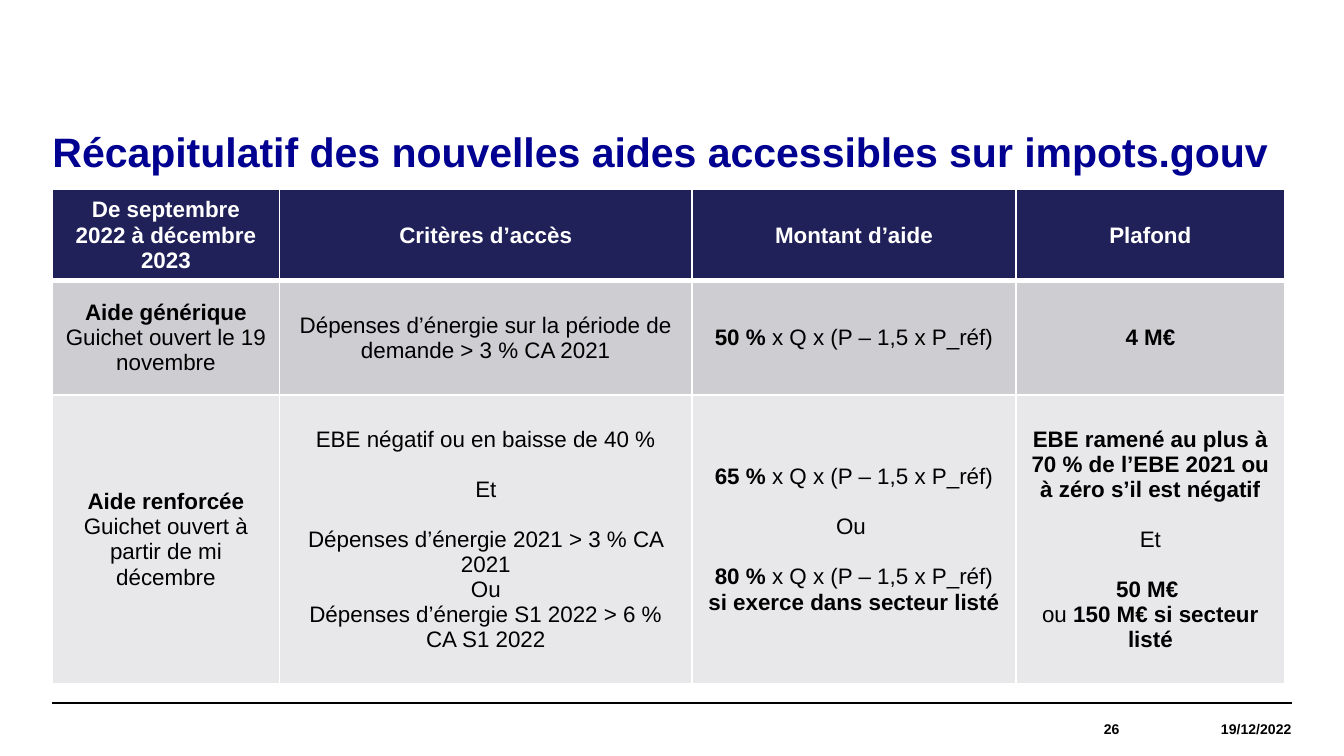
from dataclasses import dataclass

from lxml import etree
from pptx import Presentation
from pptx.dml.color import RGBColor
from pptx.enum.shapes import MSO_CONNECTOR
from pptx.enum.text import MSO_ANCHOR, PP_ALIGN
from pptx.oxml.ns import qn
from pptx.util import Inches, Pt

LEFT, CENTER, RIGHT = PP_ALIGN.LEFT, PP_ALIGN.CENTER, PP_ALIGN.RIGHT
TOP, MIDDLE = MSO_ANCHOR.TOP, MSO_ANCHOR.MIDDLE
STRAIGHT = MSO_CONNECTOR.STRAIGHT


@dataclass(frozen=True)
class Theme:
    font: str = "Arial"
    title: str = "000091"
    header: str = "21215A"
    generic: str = "CDCDD2"
    reinforced: str = "E8E8EA"
    text: str = "000000"
    white: str = "FFFFFF"
    title_size: float = 22
    table_size: float = 12
    footer_size: float = 7.5
    gap: float = 13.4


THEME = Theme()
COLUMNS = [1.69, 3.07, 2.41, 2]
ROWS = [0.65, 0.85, 2.15]
FILLS = [THEME.header, THEME.generic, THEME.reinforced]


def bold(text):
    return text, True


def plain(text):
    return text, False


def para(*runs, gap=False):
    return runs, gap


FORMULA = plain(" x Q x (P – 1,5 x P_réf)")
HEADINGS = ["De septembre 2022 à décembre 2023", "Critères d’accès",
            "Montant d’aide", "Plafond"]

# Each cell is a list of paragraphs
CELLS = [
    [[para(bold(heading))] for heading in HEADINGS],
    [
        [para(bold("Aide générique")),
         para(plain("Guichet ouvert le 19 novembre"))],
        [para(plain("Dépenses d’énergie sur la période de demande > 3 % CA 2021"))],
        [para(bold("50 %"), FORMULA)],
        [para(bold("4 M€"))],
    ],
    [
        [para(bold("Aide renforcée")),
         para(plain("Guichet ouvert à partir de mi décembre"))],
        [para(plain("EBE négatif ou en baisse de 40 %")),
         para(plain("Et"), gap=True),
         para(plain("Dépenses d’énergie 2021 > 3 % CA 2021"), gap=True),
         para(plain("Ou")),
         para(plain("Dépenses d’énergie S1 2022 > 6 % CA S1 2022"))],
        [para(bold("65 %"), FORMULA),
         para(plain("Ou "), gap=True),
         para(bold("80 %"), FORMULA, gap=True),
         para(bold("si exerce dans secteur listé"))],
        [para(bold("EBE ramené au plus à 70 % de l’EBE 2021 ou à zéro s’il est négatif")),
         para(plain("Et"), gap=True),
         para(bold("50 M€ "), gap=True),
         para(plain("ou "), bold("150 M€ si secteur listé"))],
    ],
]


def add_run(p, text, size, color, is_bold):
    r = p.add_run()
    r.text = text
    r.font.name = THEME.font
    r.font.size = Pt(size)
    r.font.bold = is_bold
    r.font.color.rgb = RGBColor.from_string(color)


def add_text(s, box, text, size, color, align=LEFT, anchor=TOP, spacing=1.0):
    tf = s.shapes.add_textbox(*map(Inches, box)).text_frame
    tf.word_wrap = True
    tf.vertical_anchor = anchor
    tf.margin_left = tf.margin_right = tf.margin_top = tf.margin_bottom = 0
    p = tf.paragraphs[0]
    p.alignment = align
    p.line_spacing = spacing
    add_run(p, text, size, color, True)


def add_rule(s, x1, x2, y):
    line = s.shapes.add_connector(STRAIGHT, Inches(x1), Inches(y), Inches(x2), Inches(y))
    line.line.color.rgb = RGBColor.from_string(THEME.text)
    line.line.width = Pt(0.8)
    etree.SubElement(line._element.spPr, qn("a:effectLst"))


def set_borders(cell, top, bottom):
    tc_pr = cell._tc.get_or_add_tcPr()
    for side, width in (("L", 1), ("R", 1), ("T", top), ("B", bottom)):
        ln = etree.SubElement(tc_pr, qn(f"a:ln{side}"), w=str(Pt(width)))
        fill = etree.SubElement(ln, qn("a:solidFill"))
        etree.SubElement(fill, qn("a:srgbClr"), val=THEME.white)


def fill_cell(cell, paragraphs, fill, color):
    cell.vertical_anchor = MIDDLE
    cell.margin_left = cell.margin_right = Inches(0.09)
    cell.margin_top = cell.margin_bottom = Inches(0.04)
    cell.fill.solid()
    cell.fill.fore_color.rgb = RGBColor.from_string(fill)
    tf = cell.text_frame
    for i, (runs, gap) in enumerate(paragraphs):
        p = tf.add_paragraph() if i else tf.paragraphs[0]
        p.alignment = CENTER
        if gap:
            p.space_before = Pt(THEME.gap)
        for text, is_bold in runs:
            add_run(p, text, THEME.table_size, color, is_bold)


def add_aid_table(s, left, top):
    table = s.shapes.add_table(len(ROWS), len(COLUMNS), Inches(left), Inches(top),
                               Inches(sum(COLUMNS)), Inches(sum(ROWS))).table
    for column, width in zip(table.columns, COLUMNS):
        column.width = Inches(width)
    for i, (row, height) in enumerate(zip(table.rows, ROWS)):
        row.height = Inches(height)
        color = THEME.text if i else THEME.white
        for cell, paragraphs in zip(row.cells, CELLS[i]):
            # A thick rule separates the header from the body
            set_borders(cell, top=3 if i == 1 else 1, bottom=3 if i == 0 else 1)
            fill_cell(cell, paragraphs, FILLS[i], color)


def main():
    prs = Presentation()
    # Widescreen, 16:9
    prs.slide_width = Inches(10)
    prs.slide_height = Inches(10) * 9 // 16
    s = prs.slides.add_slide(prs.slide_layouts[6])

    # Footer rule
    add_rule(s, 0.39, 9.61, 5.23)

    # Title and table
    add_text(s, (0.39, 0.98, 9.21, 0.79),
             "Récapitulatif des nouvelles aides accessibles sur impots.gouv",
             THEME.title_size, THEME.title, spacing=0.9)
    add_aid_table(s, 0.39, 1.41)

    # Date and page number
    for left, width, text in ((8.33, 1.28, "19/12/2022"), (6.85, 1.48, "26")):
        add_text(s, (left, 5.23, width, 0.39), text, THEME.footer_size,
                 THEME.text, RIGHT, MIDDLE)

    prs.save("out.pptx")


if __name__ == "__main__":
    main()
